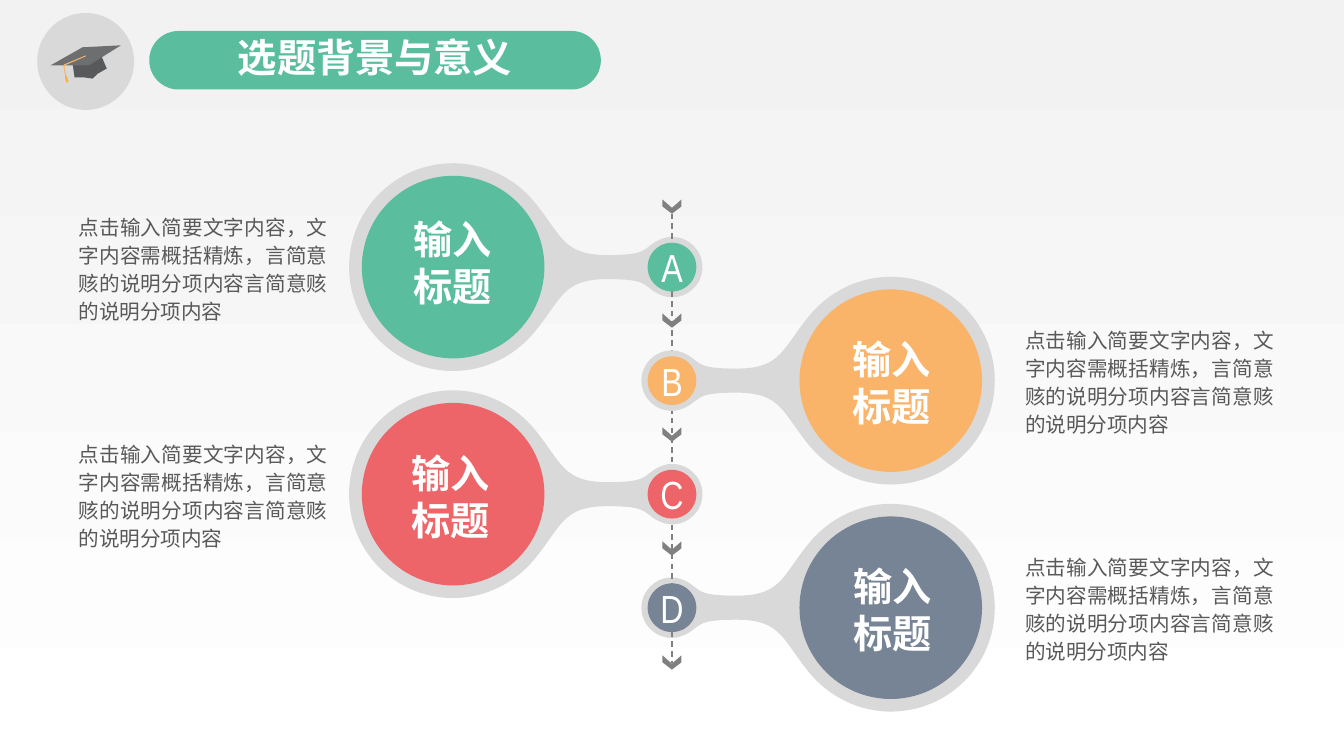
from lxml.etree import SubElement
from pptx import Presentation
from pptx.dml.color import RGBColor
from pptx.enum.dml import MSO_LINE_DASH_STYLE as DASH
from pptx.enum.shapes import MSO_CONNECTOR as CONNECTOR, MSO_SHAPE as SHAPE
from pptx.enum.text import MSO_ANCHOR as ANCHOR, PP_ALIGN as ALIGN
from pptx.oxml.ns import qn
from pptx.util import Pt

CJK = "Noto Sans CJK SC"
LATIN = "Arial Narrow"
GREEN, ORANGE, RED, SLATE = "5ABE9E", "F9B46A", "ED6568", "778495"
PALE, GREY, WHITE = "D9D9D9", "808080", "FFFFFF"
BODY = "点击输入简要文字内容，文字内容需概括精炼，言简意赅的说明分项内容言简意赅的说明分项内容"

SPINE_X, FIRST_ROW, ROW_STEP = 480, 190.8, 81.1
FIRST_CHEVRON, CHEVRON_STEP = 142.5, 81.4
DISC_OFFSET, DISC_RADIUS, DOT_RADIUS = 156.3, 65.2, 17.4

TOPICS = [
    ("A", GREEN, -1, 295.2, 153.9),
    ("B", ORANGE, 1, 608.6, 239.8),
    ("C", RED, -1, 293.8, 321.1),
    ("D", SLATE, 1, 609.8, 401.8),
]

BALLOON_TOP = [
    (230.6, 0),
    (230.6, -41), (197.5, -74.2), (156.3, -74.2),
    (133.3, -74.2), (112.5, -63.4), (98.8, -47.2),
    (78.6, -23), (78.6, -8.6), (46.2, -8.6),
    (18.8, -8.6), (21, -12.2), (11.8, -18),
    (8, -20.2), (4.1, -21.6), (0, -21.6),
    (-12, -21.6), (-21.8, -12), (-21.8, 0),
]
BALLOON = BALLOON_TOP + [(x, -y) for x, y in reversed(BALLOON_TOP[:-1])]
CHEVRON = [(0, 6), (-6.8, 0), (-6.8, 5), (0, 10.2), (6.8, 5), (6.8, 0)]
CAP = [
    ("58595B", [(72, 38.9), (51.8, 44.6), (53.3, 55.4), (60, 55.3), (66.2, 56.2),
                (70, 52.6), (76.3, 49)]),
    ("6D6E70", [(59, 33.8), (36, 46.8), (63.4, 46.8), (86.4, 32.4)]),
    (ORANGE, [(61.2, 39.6), (61.4, 40.2), (46.1, 46.8), (47.5, 55.4),
              (46.8, 55.4), (45.2, 46.8), (45.8, 46)]),
    ("FAAF40", [(46.6, 54), (47.6, 54), (49, 58.3), (47.5, 59), (46.5, 56)]),
]


def color(value):
    return RGBColor.from_string(value)


def paint(shape, fill):
    shape.shadow.inherit = False
    shape.fill.solid()
    shape.fill.fore_color.rgb = color(fill)
    shape.line.fill.background()


def add_shape(slide, kind, left, top, width, height, fill):
    shape = slide.shapes.add_shape(kind, Pt(left), Pt(top), Pt(width), Pt(height))
    paint(shape, fill)
    return shape


def add_circle(slide, x, y, radius, fill):
    return add_shape(slide, SHAPE.OVAL, x - radius, y - radius, 2 * radius, 2 * radius, fill)


def add_outline(slide, points, fill):
    corners = [(Pt(x), Pt(y)) for x, y in points]
    builder = slide.shapes.build_freeform(*corners[0])
    builder.add_line_segments(corners[1:], close=True)
    shape = builder.convert_to_shape()
    paint(shape, fill)
    return shape


def bend(shape):
    outline = next(shape._element.iter(qn("a:path")))
    segments = outline.findall(qn("a:lnTo"))
    for start in range(0, len(segments), 3):
        curve = SubElement(outline, qn("a:cubicBezTo"))
        for segment in segments[start:start + 3]:
            curve.append(segment[0])
            outline.remove(segment)
    outline.append(outline.find(qn("a:close")))


def write(frame, text, size, fill, font=CJK, bold=False, align=None):
    frame.text = text
    para = frame.paragraphs[0]
    para.alignment = align
    span = para.runs[0]
    span.font.size = Pt(size)
    span.font.bold = bold
    span.font.name = font
    span.font.color.rgb = color(fill)
    span.font._element.set("lang", "zh-CN")
    SubElement(span.font._element, qn("a:ea")).set("typeface", font)
    return para


def clear_margins(frame):
    frame.margin_left = frame.margin_right = frame.margin_top = frame.margin_bottom = 0


def add_text(slide, left, top, width, height, text, size, fill, **style):
    box = slide.shapes.add_textbox(Pt(left), Pt(top), Pt(width), Pt(height))
    frame = box.text_frame
    frame.word_wrap = True
    clear_margins(frame)
    return write(frame, text, size, fill, **style)


def row_y(row):
    return FIRST_ROW + row * ROW_STEP


def add_balloon(slide, row):
    side = TOPICS[row][2]
    points = [(SPINE_X + side * x, row_y(row) + y) for x, y in BALLOON]
    bend(add_outline(slide, points, PALE))


def add_spine(slide):
    line = slide.shapes.add_connector(CONNECTOR.STRAIGHT, Pt(SPINE_X), Pt(152.6),
                                      Pt(SPINE_X), Pt(473.8))
    line.line.color.rgb = color(GREY)
    line.line.width = Pt(1)
    line.line.dash_style = DASH.DASH
    SubElement(line._element.spPr, qn("a:effectLst"))
    for index in range(5):
        top = FIRST_CHEVRON + index * CHEVRON_STEP
        add_outline(slide, [(SPINE_X + x, top + y) for x, y in CHEVRON], GREY)


def add_topic(slide, row):
    letter, fill, side, label_left, label_top = TOPICS[row]
    y = row_y(row)
    add_circle(slide, SPINE_X + side * DISC_OFFSET, y, DISC_RADIUS, fill)
    dot = add_circle(slide, SPINE_X, y, DOT_RADIUS, fill)
    clear_margins(dot.text_frame)
    dot.text_frame.vertical_anchor = ANCHOR.MIDDLE
    write(dot.text_frame, letter, 28, WHITE, font=LATIN, align=ALIGN.CENTER)
    add_text(slide, label_left, label_top, 70, 67.7, "输入标题", 28, WHITE, bold=True)
    body_left, rise = (56.2, 39.7) if side < 0 else (732.2, 40.2)
    para = add_text(slide, body_left, y - rise, 177.5, 80.6, BODY, 14.67, "595959",
                    align=ALIGN.JUSTIFY)
    para.line_spacing = Pt(20)


def add_header(slide):
    add_circle(slide, 61.2, 43.9, 34.6, PALE)
    for fill, points in CAP:
        add_outline(slide, points, fill)
    pill = add_shape(slide, SHAPE.ROUNDED_RECTANGLE, 106.6, 22.1, 322.6, 41.8, GREEN)
    pill.adjustments[0] = 0.5
    title = slide.shapes.title
    title.left, title.top, title.width, title.height = Pt(161.3), Pt(20.3), Pt(213.1), Pt(41)
    title.text_frame.word_wrap = False
    title.text_frame.vertical_anchor = ANCHOR.TOP
    write(title.text_frame, "选题背景与意义", 28, WHITE, bold=True, align=ALIGN.CENTER)
    slide.shapes._spTree.append(title._element)


def set_background(slide):
    fill = slide.background.fill
    fill.gradient()
    fill.gradient_angle = 270
    for stop, value in zip(fill.gradient_stops, ("F2F2F2", WHITE)):
        stop.color.rgb = color(value)


def main():
    deck = Presentation()
    deck.slide_width, deck.slide_height = Pt(960), Pt(540)
    slide = deck.slides.add_slide(deck.slide_layouts[5])
    set_background(slide)
    add_header(slide)
    for row in (0, 3):
        add_balloon(slide, row)
    add_spine(slide)
    for row in (1, 2):
        add_balloon(slide, row)
    for row in range(len(TOPICS)):
        add_topic(slide, row)
    deck.save("out.pptx")


if __name__ == "__main__":
    main()
